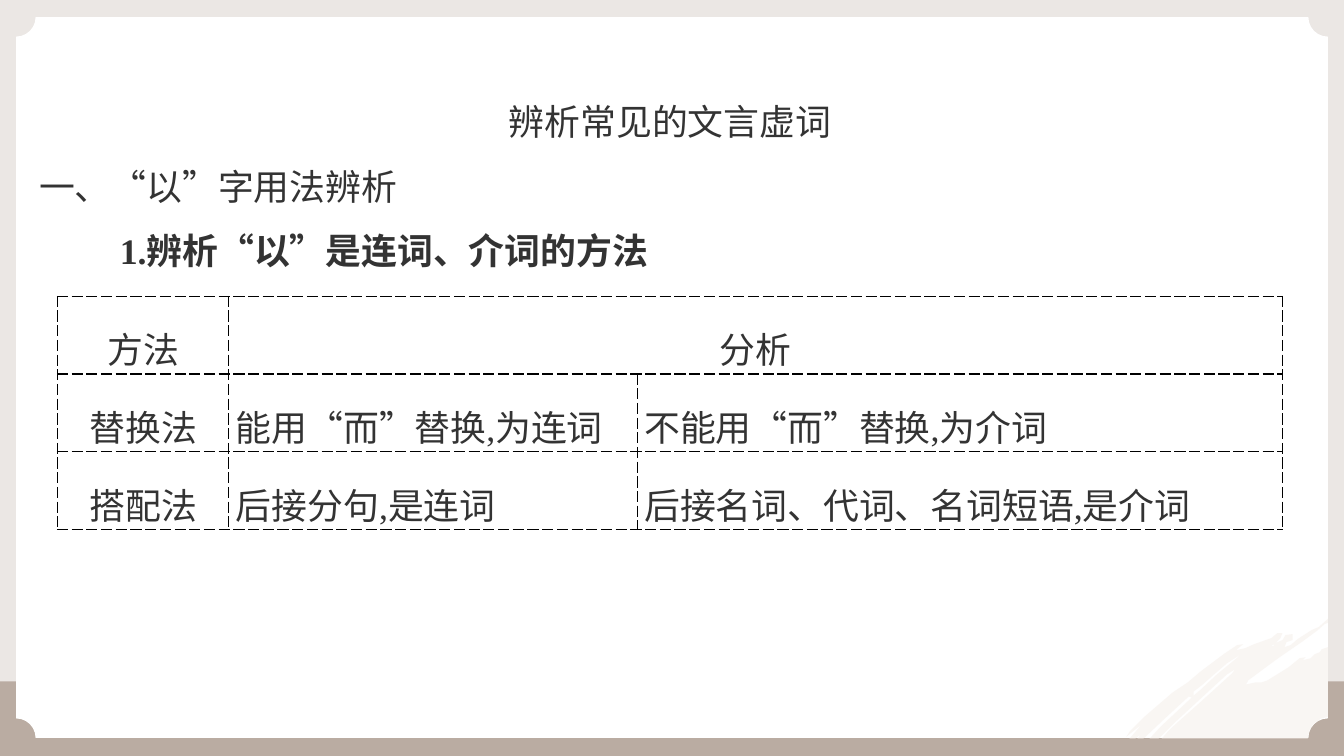
from pptx import Presentation, oxml
from pptx.dml.color import RGBColor
from pptx.enum import lang, shapes, text
from pptx.oxml import ns
from pptx.util import Inches, Pt

COLORS = {"frame": "EBE7E4", "band": "BAACA2", "panel": "FFFFFF",
          "brush": "F2E9E3", "ink": "333333", "border": "000000"}
FONT = "Times New Roman"
SIZE = 25.6

ROWS = [["方法", "分析", ""],
        ["替换法", "能用“而”替换,为连词", "不能用“而”替换,为介词"],
        ["搭配法", "后接分句,是连词", "后接名词、代词、名词短语,是介词"]]
COLUMN_WIDTHS = [1.7, 4.05, 6.4]
ROW_HEIGHT = 0.71

# Brush stroke outlines, in hundredths of an inch
BRUSH = [
    [(1317, 614), (1317, 618), (1314, 619), (1306, 626), (1291, 637),
     (1275, 648), (1265, 655), (1238, 675), (1236, 679), (1245, 677),
     (1251, 677), (1257, 675), (1278, 662), (1289, 653), (1295, 652),
     (1292, 655), (1300, 653), (1304, 649), (1309, 647), (1311, 644),
     (1317, 642), (1317, 711), (1310, 713), (1303, 718), (1299, 724),
     (1297, 733), (1152, 733), (1159, 725), (1163, 721), (1189, 698),
     (1222, 668), (1225, 664), (1217, 669), (1192, 692), (1165, 717),
     (1149, 733), (1140, 733), (1151, 721), (1182, 692), (1179, 691),
     (1153, 715), (1134, 733), (1128, 733), (1132, 728), (1126, 733),
     (1120, 733), (1132, 719), (1117, 731), (1121, 725), (1134, 712),
     (1163, 687), (1178, 677), (1191, 666), (1215, 648), (1227, 640),
     (1233, 639), (1226, 645), (1235, 643), (1244, 639), (1261, 633),
     (1267, 628), (1272, 628), (1270, 633), (1265, 638), (1272, 635),
     (1275, 630), (1282, 629), (1282, 635), (1276, 637), (1274, 642),
     (1280, 640), (1287, 634), (1301, 625), (1308, 622)],
    [(1231, 649), (1217, 658), (1202, 671), (1193, 679), (1184, 686),
     (1184, 690), (1191, 684), (1207, 669), (1224, 655)],
    [(1264, 639), (1261, 641), (1263, 641)],
]


def paint(shape, color):
    shape.shadow.inherit = False
    shape.fill.solid()
    shape.fill.fore_color.rgb = RGBColor.from_string(COLORS[color])
    shape.line.fill.background()


def add_block(page, kind, color, left, top, width, height):
    block = page.shapes.add_shape(kind, Inches(left), Inches(top),
                                  Inches(width), Inches(height))
    paint(block, color)
    return block


def add_brush(page):
    first, *others = BRUSH
    builder = page.shapes.build_freeform(*first[0], scale=Inches(0.01))
    builder.add_line_segments(first[1:])
    for outline in others:
        builder.move_to(*outline[0])
        builder.add_line_segments(outline[1:])
    brush = builder.convert_to_shape()
    paint(brush, "brush")
    tint = brush.element.xpath("./p:spPr/a:solidFill/a:srgbClr")[0]
    tint.append(oxml.parse_xml(f'<a:alpha {ns.nsdecls("a")} val="40000"/>'))


def write(para, words, align, bold=False):
    para.text = words
    para.alignment = align
    para.line_spacing = 1.5
    para.space_before = Pt(0)
    for span in para.runs:
        font = span.font
        font.size, font.name, font.bold = Pt(SIZE), FONT, bold
        font.color.rgb = RGBColor.from_string(COLORS["ink"])
        font.language_id = lang.MSO_LANGUAGE_ID.SIMPLIFIED_CHINESE


def place_text(box, left, top, width, height):
    box.left, box.top = Inches(left), Inches(top)
    box.width, box.height = Inches(width), Inches(height)
    frame = box.text_frame
    frame.word_wrap = True
    frame.auto_size = text.MSO_AUTO_SIZE.NONE
    frame.vertical_anchor = text.MSO_ANCHOR.TOP
    return frame


def add_headings(page):
    # Title, kept in front of the background
    title = page.shapes.title
    page.shapes._spTree.append(title.element)
    frame = place_text(title, 0.29, 0.73, 12.71, 0.74)
    write(frame.paragraphs[0], "辨析常见的文言虚词", text.PP_ALIGN.CENTER)

    # Section headings
    box = page.shapes.add_textbox(0, 0, 0, 0)
    frame = place_text(box, 0.29, 1.37, 12.71, 1.4)
    write(frame.paragraphs[0], "一、“以”字用法辨析", text.PP_ALIGN.JUSTIFY)
    para = frame.add_paragraph()
    write(para, "1.辨析“以”是连词、介词的方法", text.PP_ALIGN.JUSTIFY, bold=True)
    para._p.get_or_add_pPr().set("indent", str(Inches(0.8)))


def add_borders(cell):
    properties = cell._tc.get_or_add_tcPr()
    for position, side in enumerate("LRTB"):
        properties.insert(position, oxml.parse_xml(
            f'<a:ln{side} {ns.nsdecls("a")} w="{Pt(1)}"><a:solidFill>'
            f'<a:srgbClr val="{COLORS["border"]}"/></a:solidFill>'
            f'<a:prstDash val="dash"/></a:ln{side}>'))


def add_method_table(page):
    table = page.shapes.add_table(
        len(ROWS), len(COLUMN_WIDTHS), Inches(0.57), Inches(2.94),
        Inches(sum(COLUMN_WIDTHS)), Inches(ROW_HEIGHT * len(ROWS))).table
    table.first_row = table.horz_banding = False
    for column, width in zip(table.columns, COLUMN_WIDTHS):
        column.width = Inches(width)
    for row_index, words in enumerate(ROWS):
        table.rows[row_index].height = Inches(ROW_HEIGHT)
        for column_index, entry in enumerate(words):
            cell = table.cell(row_index, column_index)
            centred = row_index == 0 or column_index == 0
            side = Inches(0 if centred else 0.07)
            cell.margin_left = cell.margin_right = side
            cell.margin_top = cell.margin_bottom = 0
            cell.vertical_anchor = text.MSO_ANCHOR.BOTTOM
            cell.fill.background()
            add_borders(cell)
            write(cell.text_frame.paragraphs[0], entry,
                  text.PP_ALIGN.CENTER if centred else text.PP_ALIGN.JUSTIFY)
    table.cell(0, 1).merge(table.cell(0, 2))


def main():
    deck = Presentation()
    deck.slide_width, deck.slide_height = Inches(13.33), Inches(7.5)
    page = deck.slides.add_slide(deck.slide_layouts[5])

    # Background frame
    kinds = shapes.MSO_SHAPE
    add_block(page, kinds.RECTANGLE, "frame", 0, 0, 13.33, 7.5)
    add_block(page, kinds.RECTANGLE, "band", 0, 6.76, 13.33, 0.74)
    panel = add_block(page, kinds.PLAQUE, "panel", 0.16, 0.17, 13.01, 7.15)
    panel.adjustments[0] = 0.027
    add_brush(page)

    # Content
    add_headings(page)
    add_method_table(page)
    deck.save("out.pptx")


if __name__ == "__main__":
    main()
